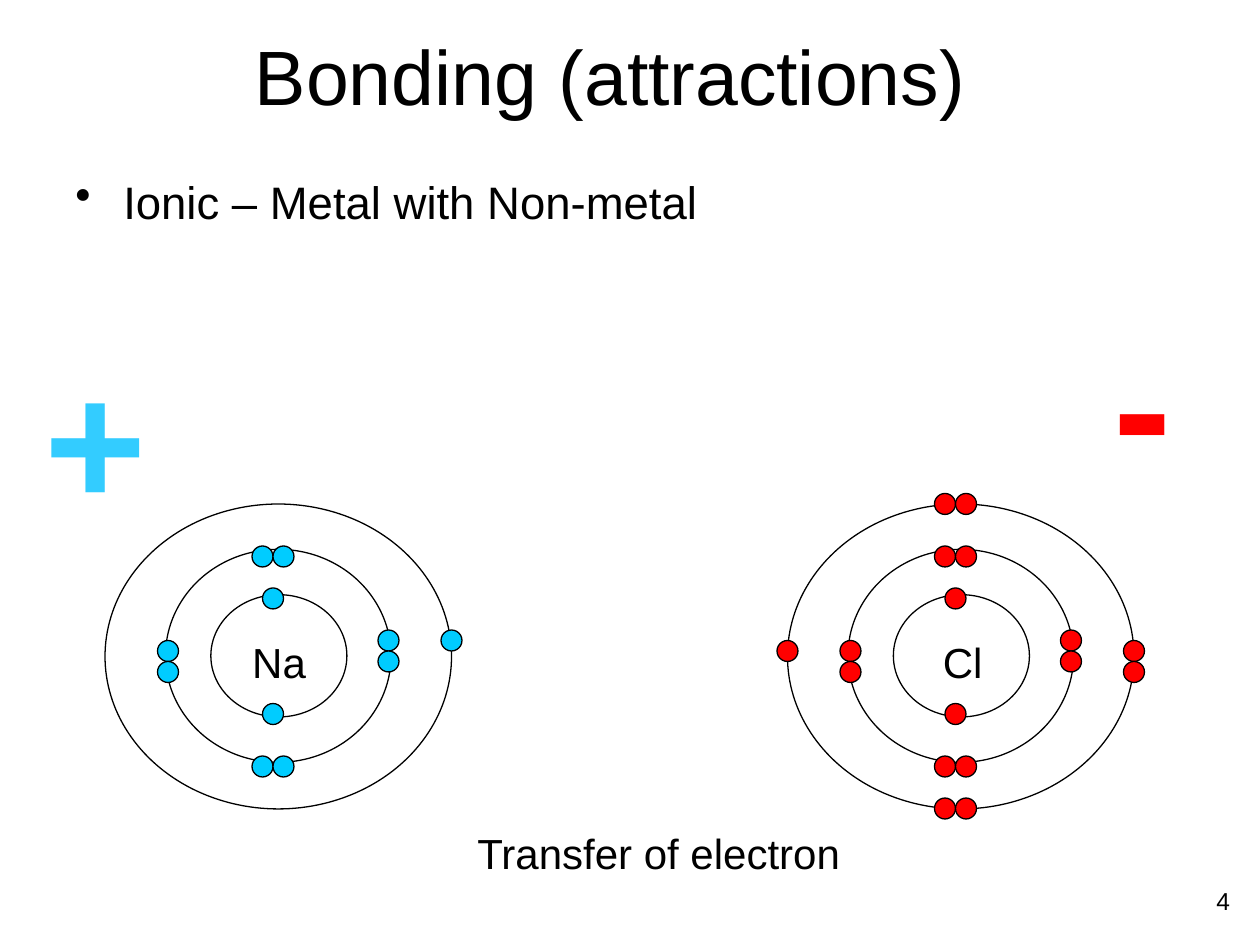
"""Build a slide showing ionic bonding between sodium and chlorine."""
from lxml import etree
from pptx import Presentation, util as u
from pptx.dml.color import RGBColor
from pptx.enum import shapes, text
from pptx.oxml.ns import qn

WIDTH, HEIGHT = 10, 7.5
UNIT = 1 / 12
DOT = 2
ATOM_TOP = 48
BLACK = "000000"

LEFT, CENTER, RIGHT = text.PP_ALIGN.LEFT, text.PP_ALIGN.CENTER, text.PP_ALIGN.RIGHT

SHELLS = [(0, 0, 2.75, 2.42), (0.48, 0.36, 1.79, 1.69), (0.84, 0.72, 1.08, 0.97)]
INNER_ELECTRONS = [(15, 8), (15, 19), (14, 4), (16, 4), (5, 13), (5, 15),
                   (14, 24), (16, 24), (26, 12), (26, 14)]
ATOMS = [
    {"left": 75, "color": "FF0000",
     "outer": [(14, -1), (16, -1), (-1, 13), (32, 13), (32, 15), (14, 28), (16, 28)]},
    {"left": 10, "color": "00CCFF", "outer": [(32, 12)]},
]
LABELS = [
    ("Cl", (7.38, 5, 0.52, 0.51), 24, BLACK, False, CENTER, False),
    ("Na", (1.9, 5, 0.63, 0.51), 24, BLACK, False, CENTER, False),
    ("+", (0.25, 2.58, 1.01, 1.77), 100, "33CCFF", True, CENTER, False),
    ("-", (8.74, 2.3, 0.66, 1.77), 100, "FF0000", True, CENTER, False),
    ("Transfer of electron", (3.69, 6.52, 3.11, 0.51), 24, BLACK, False, LEFT, False),
    ("4", (9.51, 6.98, 0.35, 0.36), 14, BLACK, False, RIGHT, True),
]
TITLE = ("Bonding (attractions)", (0.68, 0.24, 8.33, 0.7), 44, BLACK, False, CENTER, True)
BODY = ("Ionic – Metal with Non-metal", (0.5, 1.33, 8.92, 1.84), 26, BLACK, False, LEFT, True)


def rgb(color):
    return RGBColor.from_string(color)


def inches(frame):
    return [u.Inches(length) for length in frame]


def add_text(page, words, frame, size, color, bold, align, wrap):
    box = page.shapes.add_textbox(*inches(frame))
    box.text_frame.word_wrap = wrap
    para = box.text_frame.paragraphs[0]
    para.alignment = align
    span = para.add_run()
    span.text = words
    span.font.name = "Arial"
    span.font.size = u.Pt(size)
    span.font.bold = bold
    span.font.color.rgb = rgb(color)
    return box


def add_bullet(para, indent):
    props = para._p.get_or_add_pPr()
    props.set("marL", str(u.Inches(indent)))
    props.set("indent", str(-u.Inches(indent)))
    etree.SubElement(props, qn("a:buChar")).set("char", "•")


def add_ellipse(page, frame, color=None):
    ellipse = page.shapes.add_shape(shapes.MSO_SHAPE.OVAL, *inches(frame))
    ellipse.shadow.inherit = False
    ellipse.line.color.rgb = rgb(BLACK)
    ellipse.line.width = u.Pt(0.75)
    if color:
        ellipse.fill.solid()
        ellipse.fill.fore_color.rgb = rgb(color)
    else:
        ellipse.fill.background()


def add_atom(page, atom):
    for x, y, width, height in SHELLS:
        add_ellipse(page, (atom["left"] * UNIT + x, ATOM_TOP * UNIT + y, width, height))
    for column, row in INNER_ELECTRONS + atom["outer"]:
        cell = (atom["left"] + column, ATOM_TOP + row, DOT, DOT)
        add_ellipse(page, [length * UNIT for length in cell], atom["color"])


def main():
    deck = Presentation()
    deck.slide_width, deck.slide_height = inches((WIDTH, HEIGHT))
    page = deck.slides.add_slide(deck.slide_layouts[6])
    title = add_text(page, *TITLE)
    title.text_frame.vertical_anchor = text.MSO_ANCHOR.MIDDLE
    body = add_text(page, *BODY)
    add_bullet(body.text_frame.paragraphs[0], 0.38)
    for atom in ATOMS:
        add_atom(page, atom)
    for label in LABELS:
        add_text(page, *label)
    deck.save("out.pptx")


if __name__ == "__main__":
    main()
